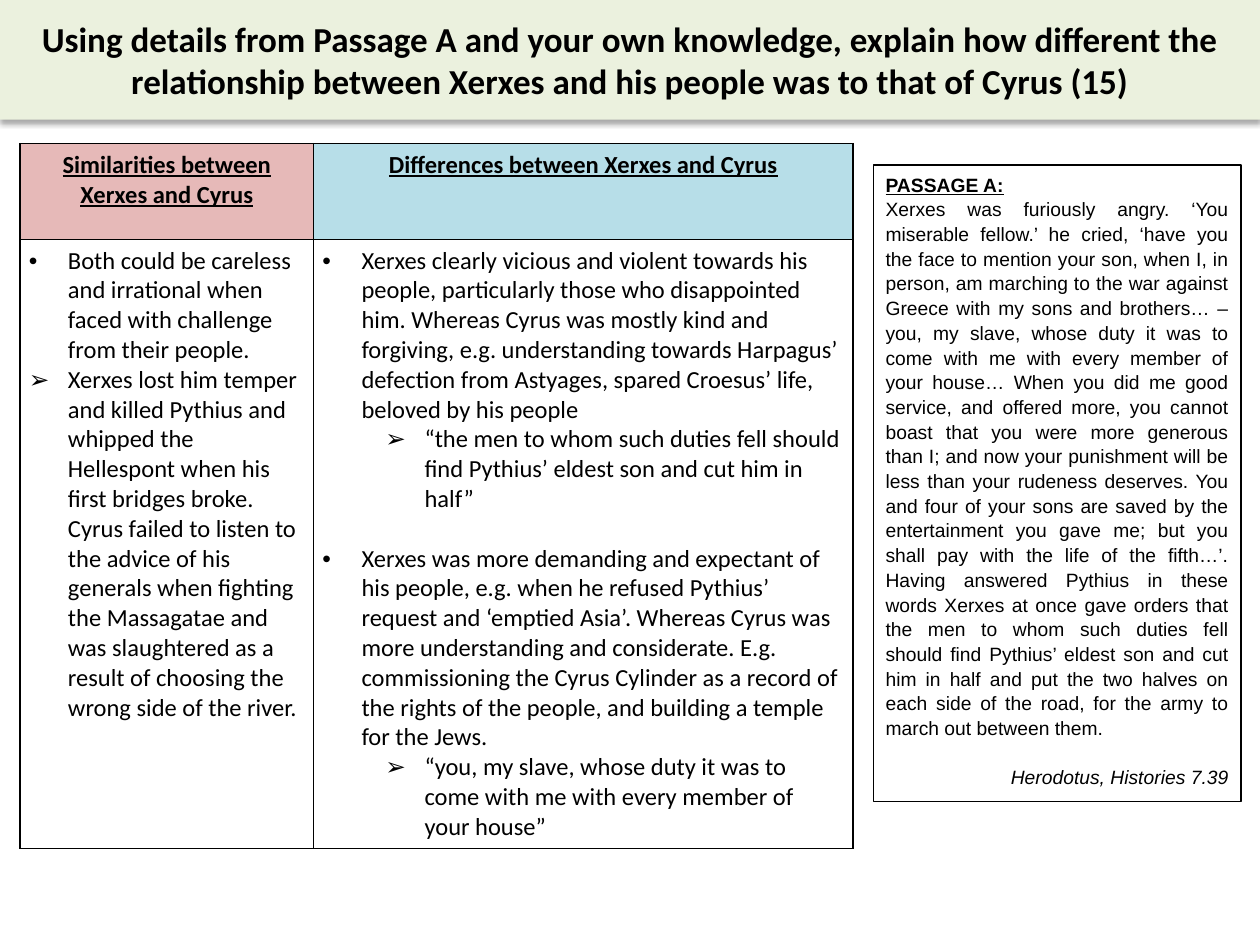
import pptx
import pptx.util
import pptx.dml.color
import pptx.enum.shapes
import pptx.enum.text
import pptx.oxml.ns
from lxml import etree

Inches = pptx.util.Inches
Pt = pptx.util.Pt
RGBColor = pptx.dml.color.RGBColor
ALIGN = pptx.enum.text.PP_ALIGN
ANCHOR = pptx.enum.text.MSO_ANCHOR

BLACK = RGBColor(0x00, 0x00, 0x00)
WHITE = RGBColor(0xFF, 0xFF, 0xFF)
PALE_GREEN = RGBColor(0xEB, 0xF1, 0xDE)
PINK = RGBColor(0xE6, 0xB9, 0xB8)
LIGHT_BLUE = RGBColor(0xB7, 0xDE, 0xE8)

QUESTION = "Using details from Passage A and your own knowledge, explain how different the relationship between Xerxes and his people was to that of Cyrus (15)"

# (level, bullet, points of space before, text)
COLUMNS = [
    {
        "heading": "Similarities between Xerxes and Cyrus",
        "fill": PINK,
        "width": 2.33,
        "points": [
            (0, "•", 0, "Both could be careless and irrational when faced with challenge from their people."),
            (0, "➢", 0, "Xerxes lost him temper and killed Pythius and whipped the Hellespont when his first bridges broke. Cyrus failed to listen to the advice of his generals when fighting the Massagatae and was slaughtered as a result of choosing the wrong side of the river."),
        ],
    },
    {
        "heading": "Differences between Xerxes and Cyrus",
        "fill": LIGHT_BLUE,
        "width": 4.28,
        "points": [
            (0, "•", 0, "Xerxes clearly vicious and violent towards his people, particularly those who disappointed him. Whereas Cyrus was mostly kind and forgiving, e.g. understanding towards Harpagus’ defection from Astyages, spared Croesus’ life, beloved by his people"),
            (1, "➢", 0, "“the men to whom such duties fell should find Pythius’ eldest son and cut him in half”"),
            (0, "•", 17, "Xerxes was more demanding and expectant of his people, e.g. when he refused Pythius’ request and ‘emptied Asia’. Whereas Cyrus was more understanding and considerate. E.g. commissioning the Cyrus Cylinder as a record of the rights of the people, and building a temple for the Jews."),
            (1, "➢", 0, "“you, my slave, whose duty it was to come with me with every member of your house”"),
        ],
    },
]
ROW_HEIGHTS = [0.76, 4.77]

PASSAGE = [
    ("PASSAGE A:", ALIGN.JUSTIFY, 0, {"bold": True, "underline": True}),
    ("Xerxes was furiously angry. ‘You miserable fellow.’ he cried, ‘have you the face to mention your son, when I, in person, am marching to the war against Greece with my sons and brothers… – you, my slave, whose duty it was to come with me with every member of your house… When you did me good service, and offered more, you cannot boast that you were more generous than I; and now your punishment will be less than your rudeness deserves. You and four of your sons are saved by the entertainment you gave me; but you shall pay with the life of the fifth…’. Having answered Pythius in these words Xerxes at once gave orders that the men to whom such duties fell should find Pythius’ eldest son and cut him in half and put the two halves on each side of the road, for the army to march out between them.", ALIGN.JUSTIFY, 0, {}),
    ("Herodotus, Histories 7.39", ALIGN.RIGHT, 14, {"italic": True}),
]


def add_element(parent, tag, **attributes):
    return etree.SubElement(parent, pptx.oxml.ns.qn(tag), attributes)


def style_runs(paragraph, font_name, size, bold=False, underline=False, italic=False):
    for run in paragraph.runs:
        font = run.font
        font.name, font.size = font_name, Pt(size)
        font.bold, font.underline, font.italic = bold, underline, italic
        font.color.rgb = BLACK


def add_box(slide, left, top, width, height, fill):
    box = slide.shapes.add_shape(
        pptx.enum.shapes.MSO_SHAPE.RECTANGLE,
        Inches(left), Inches(top), Inches(width), Inches(height))
    box.shadow.inherit = False
    box.fill.solid()
    box.fill.fore_color.rgb = fill
    box.text_frame.word_wrap = True
    return box


def add_bullet(paragraph, level, bullet):
    paragraph.level = level
    properties = paragraph._p.get_or_add_pPr()
    properties.set("marL", str(Inches(0.31 + 0.5 * level)))
    properties.set("indent", str(Inches(-0.31)))
    add_element(properties, "a:buFont", typeface="Arial")
    add_element(properties, "a:buChar", char=bullet)


def add_borders(cell):
    properties = cell._tc.get_or_add_tcPr()
    for position, side in enumerate(("a:lnL", "a:lnR", "a:lnT", "a:lnB")):
        line = add_element(properties, side, w=str(Pt(1)))
        add_element(add_element(line, "a:solidFill"), "a:srgbClr", val=str(BLACK))
        properties.insert(position, line)


def add_question(slide):
    banner = add_box(slide, 0, 0, 10, 0.95, PALE_GREEN)
    banner.line.fill.background()
    effects = banner._element.spPr.find(pptx.oxml.ns.qn("a:effectLst"))
    shadow = add_element(effects, "a:outerShdw", blurRad=str(Pt(3.1)),
                         dist=str(Pt(1.8)), dir="5400000", rotWithShape="0")
    add_element(add_element(shadow, "a:srgbClr", val=str(BLACK)), "a:alpha", val="35000")
    banner.text_frame.text = QUESTION
    banner.text_frame.vertical_anchor = ANCHOR.MIDDLE
    paragraph = banner.text_frame.paragraphs[0]
    paragraph.alignment = ALIGN.CENTER
    style_runs(paragraph, "Calibri", 20, bold=True)


def add_comparison(slide):
    width = sum(column["width"] for column in COLUMNS)
    table = slide.shapes.add_table(
        len(ROW_HEIGHTS), len(COLUMNS), Inches(0.16), Inches(1.14),
        Inches(width), Inches(sum(ROW_HEIGHTS))).table
    table.first_row = table.horz_banding = False
    for row, height in zip(table.rows, ROW_HEIGHTS):
        row.height = Inches(height)
    for index, column in enumerate(COLUMNS):
        table.columns[index].width = Inches(column["width"])
        heading, body = table.cell(0, index), table.cell(1, index)
        heading.fill.solid()
        heading.fill.fore_color.rgb = column["fill"]
        body.fill.background()
        for cell in (heading, body):
            cell.margin_left = cell.margin_right = Inches(0.07)
            cell.margin_top = cell.margin_bottom = Inches(0.05)
            add_borders(cell)

        heading.text_frame.text = column["heading"]
        title = heading.text_frame.paragraphs[0]
        title.alignment = ALIGN.CENTER
        style_runs(title, "Calibri", 14, bold=True, underline=True)

        body.text_frame.text = "\n".join(point[-1] for point in column["points"])
        for paragraph, (level, bullet, gap, _) in zip(body.text_frame.paragraphs, column["points"]):
            add_bullet(paragraph, level, bullet)
            if gap:
                paragraph.space_before = Pt(gap)
            style_runs(paragraph, "Calibri", 14)


def add_passage(slide):
    passage = add_box(slide, 6.93, 1.31, 2.92, 5.05, WHITE)
    passage.line.color.rgb = BLACK
    passage.line.width = Pt(0.75)
    frame = passage.text_frame
    frame.vertical_anchor = ANCHOR.TOP
    frame.text = "\n".join(part[0] for part in PASSAGE)
    for paragraph, (_, alignment, gap, emphasis) in zip(frame.paragraphs, PASSAGE):
        paragraph.alignment = alignment
        paragraph.line_spacing = 1.07
        if gap:
            paragraph.space_before = Pt(gap)
        style_runs(paragraph, "Arial", 11, **emphasis)


def main():
    presentation = pptx.Presentation()
    presentation.slide_width, presentation.slide_height = Inches(10), Inches(7.5)
    slide = presentation.slides.add_slide(presentation.slide_layouts[6])
    add_question(slide)
    add_comparison(slide)
    add_passage(slide)
    presentation.save("out.pptx")


if __name__ == "__main__":
    main()
